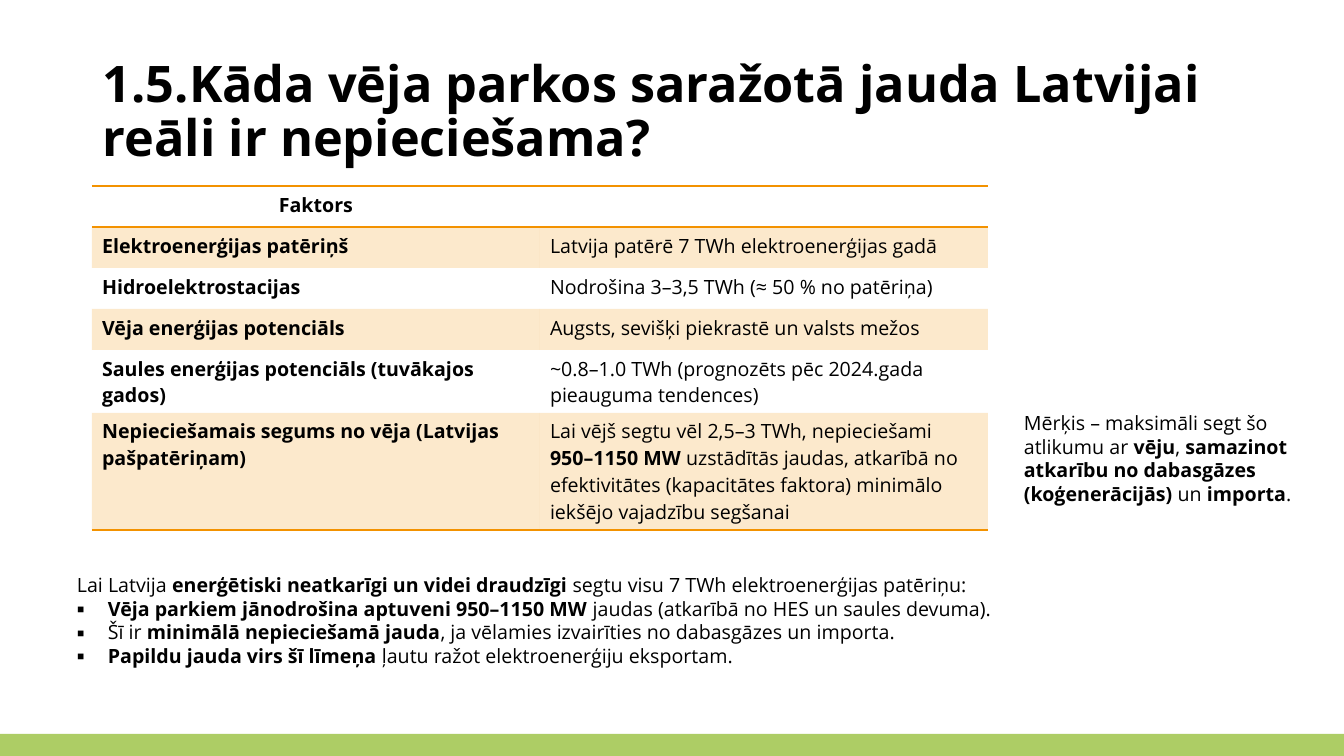
from lxml import etree
from pptx import Presentation
from pptx.dml.color import RGBColor
from pptx.enum.shapes import MSO_SHAPE
from pptx.enum.text import MSO_ANCHOR, PP_ALIGN
from pptx.oxml.ns import qn
from pptx.util import Emu, Pt

RECTANGLE = MSO_SHAPE.RECTANGLE
MIDDLE, TOP = MSO_ANCHOR.MIDDLE, MSO_ANCHOR.TOP
CENTER, LEFT = PP_ALIGN.CENTER, PP_ALIGN.LEFT

EMU_PER_PX = 914400 / 100.8
FONT = "Open Sans"
BLACK, GREEN, ORANGE = "000000", "ADCD65", "F39200"
BODY_SIZE, TITLE_SIZE = 14, 36
NO_GRID_STYLE = "{2D5ABB26-0587-4C30-8999-92F81FD0307C}"

TITLE = "**1.5.Kāda vēja parkos saražotā jauda Latvijai reāli ir nepieciešama?**"
FACTORS = [
    ("**Faktors**", ""),
    ("**Elektroenerģijas patēriņš**", "Latvija patērē 7 TWh elektroenerģijas gadā"),
    ("**Hidroelektrostacijas**", "Nodrošina 3–3,5 TWh (≈ 50 % no patēriņa)"),
    ("**Vēja enerģijas potenciāls**", "Augsts, sevišķi piekrastē un valsts mežos"),
    ("**Saules enerģijas potenciāls (tuvākajos gados)**",
     "~0.8–1.0 TWh (prognozēts pēc 2024.gada pieauguma tendences)"),
    ("**Nepieciešamais segums no vēja (Latvijas pašpatēriņam)**",
     "Lai vējš segtu vēl 2,5–3 TWh, nepieciešami **950–1150 MW** uzstādītās jaudas, "
     "atkarībā no efektivitātes (kapacitātes faktora) minimālo iekšējo vajadzību segšanai"),
]
GOAL = ("Mērķis – maksimāli segt šo atlikumu ar **vēju**, **samazinot atkarību no "
        "dabasgāzes (koģenerācijās)** un **importa**.")
SUMMARY = ("Lai Latvija **enerģētiski neatkarīgi un videi draudzīgi** segtu visu 7 TWh "
           "elektroenerģijas patēriņu:")
CONCLUSIONS = [
    "**Vēja parkiem jānodrošina aptuveni 950–1150 MW** jaudas "
    "(atkarībā no HES un saules devuma).",
    "Šī ir **minimālā nepieciešamā jauda**, ja vēlamies izvairīties no dabasgāzes un importa.",
    "**Papildu jauda virs šī līmeņa** ļautu ražot elektroenerģiju eksportam.",
]


def px(length):
    return Emu(round(length * EMU_PER_PX))


def color(hex_value):
    return RGBColor.from_string(hex_value)


def add_spans(para, text, size=BODY_SIZE):
    """Add runs to a paragraph; text between double asterisks is bold."""
    for index, part in enumerate(text.split("**")):
        if part:
            span = para.add_run()
            span.text = part
            span.font.name = FONT
            span.font.size = Pt(size)
            span.font.bold = index % 2 == 1
            span.font.color.rgb = color(BLACK)


def add_bullet(para, indent):
    properties = para._p.get_or_add_pPr()
    properties.set("marL", str(px(indent)))
    properties.set("indent", str(-px(indent)))
    bullet_color = etree.SubElement(properties, qn("a:buClr"))
    etree.SubElement(bullet_color, qn("a:srgbClr"), val=BLACK)
    etree.SubElement(properties, qn("a:buFont"), typeface=FONT)
    etree.SubElement(properties, qn("a:buChar"), char="▪")


def add_text(page, area, text, bullets=(), size=BODY_SIZE, anchor=TOP, spacing=1.0):
    frame = page.shapes.add_textbox(*map(px, area)).text_frame
    frame.word_wrap = True
    frame.vertical_anchor = anchor
    for index, line in enumerate([text, *bullets]):
        para = frame.add_paragraph() if index else frame.paragraphs[0]
        para.line_spacing = spacing
        if index:
            add_bullet(para, 31)
        add_spans(para, line, size)


def add_border(cell, side):
    line = etree.SubElement(cell._tc.get_or_add_tcPr(), qn("a:" + side), w=str(Pt(1)))
    fill = etree.SubElement(line, qn("a:solidFill"))
    etree.SubElement(fill, qn("a:srgbClr"), val=ORANGE)


def tint(cell):
    """Fill a cell with orange at 20 % opacity."""
    cell.fill.solid()
    cell.fill.fore_color.rgb = color(ORANGE)
    for tone in cell._tc.tcPr.find(qn("a:solidFill")):
        etree.SubElement(tone, qn("a:alpha"), val="20000")


def fill_cell(cell, text, row, last_row):
    if row == 0:
        add_border(cell, "lnT")
    if row in (0, last_row):
        add_border(cell, "lnB")
    if row % 2:
        tint(cell)
    else:
        cell.fill.background()
    para = cell.text_frame.paragraphs[0]
    para.alignment = LEFT if row else CENTER
    if text:
        add_spans(para, text)
    else:
        etree.SubElement(para._p, qn("a:endParaRPr"), sz=str(BODY_SIZE * 100))


def add_factor_table(page, area, row_heights):
    frame = page.shapes.add_table(len(FACTORS), 2, *map(px, area))
    table = frame.table
    table._tbl.tblPr.find(qn("a:tableStyleId")).text = NO_GRID_STYLE
    table.horz_banding = False
    for row, (texts, height) in enumerate(zip(FACTORS, row_heights)):
        table.rows[row].height = px(height)
        for column, text in enumerate(texts):
            fill_cell(table.cell(row, column), text, row, len(FACTORS) - 1)


def add_footer_band(page, area):
    band = page.shapes.add_shape(RECTANGLE, *map(px, area))
    band.shadow.inherit = False
    band.fill.solid()
    band.fill.fore_color.rgb = color(GREEN)
    band.line.fill.background()


def main():
    deck = Presentation()
    deck.slide_width, deck.slide_height = px(1344), px(756)
    page = deck.slides.add_slide(deck.slide_layouts[6])
    add_footer_band(page, (0, 734, 1344, 22))
    add_text(page, (93, 40, 1159, 146), TITLE, size=TITLE_SIZE, anchor=MIDDLE, spacing=0.9)
    add_factor_table(page, (92, 186, 896, 344), (41, 41, 41, 41, 63, 117))
    add_text(page, (1014, 406, 321, 105), GOAL)
    add_text(page, (67, 568, 1052, 105), SUMMARY, CONCLUSIONS)
    deck.save("out.pptx")


if __name__ == "__main__":
    main()
